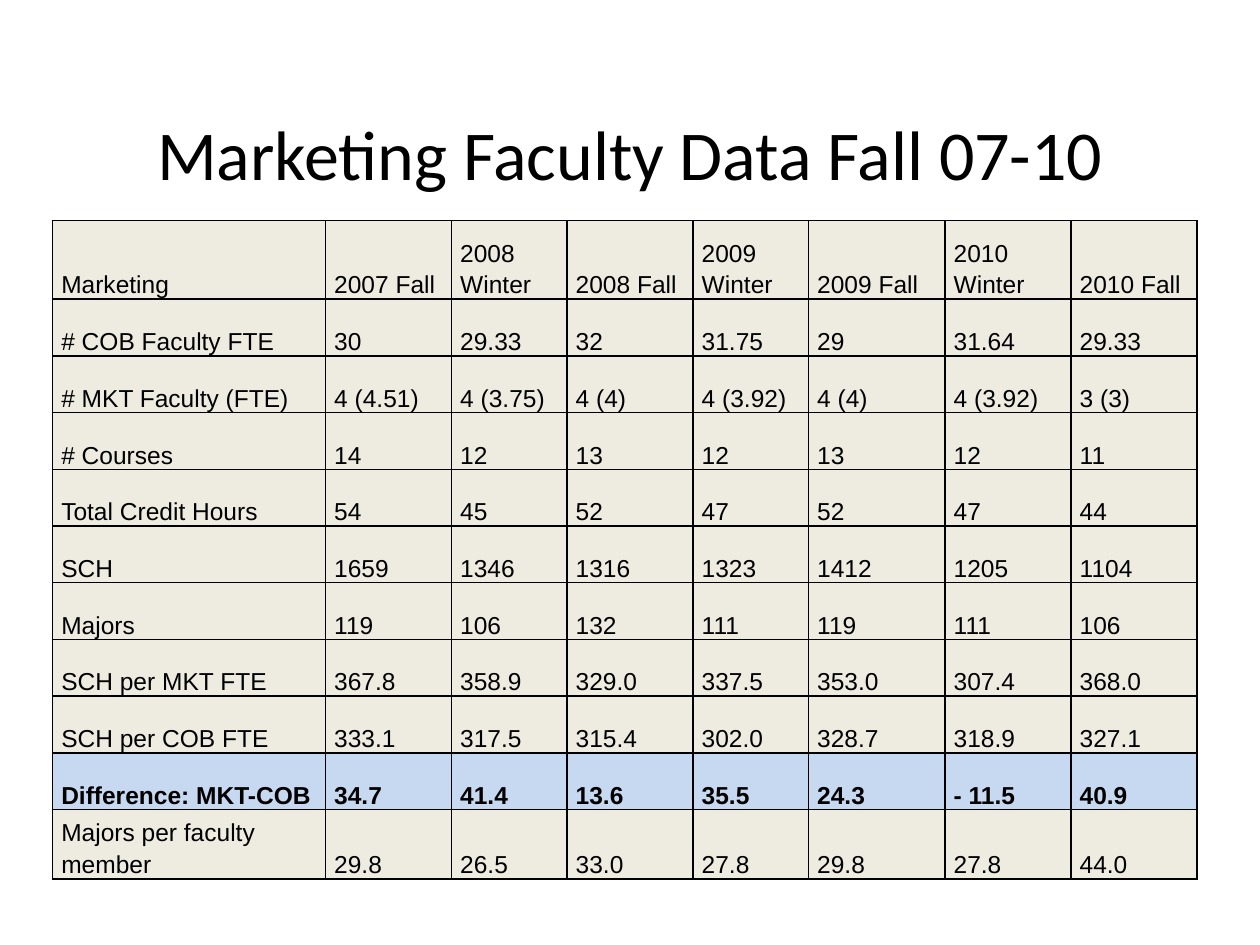
from dataclasses import dataclass

from lxml.etree import SubElement
from pptx import Presentation
from pptx.dml.color import RGBColor
from pptx.enum.text import MSO_ANCHOR as Anchor, PP_ALIGN as Align
from pptx.oxml.ns import qn
from pptx.util import Inches, Length, Pt

COLUMNS = (26, 12, 11, 12, 11, 13, 12, 12)
INK, SAND, SKY = "000000", "EEECE1", "C6D9F1"
BODY_FONT = {"name": "Arial", "size": Pt(14), "bold": False}
TITLE_FONT = {"name": "Calibri", "size": Pt(40)}
CELL_FORMAT = {
    "vertical_anchor": Anchor.BOTTOM,
    "margin_left": Inches(0.07),
    "margin_right": Inches(0.07),
    "margin_top": 0,
    "margin_bottom": 0,
}


@dataclass
class Row:
    """One table row, with its height in grid units."""

    label: str
    values: tuple[str, ...]
    height: float = 5.4
    fill: str = SAND
    bold: bool = False


ROWS = (
    Row("Marketing", ("2007 Fall", "2008 Winter", "2008 Fall", "2009 Winter",
                      "2009 Fall", "2010 Winter", "2010 Fall"), height=7.5),
    Row("# COB Faculty FTE", ("30", "29.33", "32", "31.75", "29", "31.64", "29.33")),
    Row("# MKT Faculty (FTE)", ("4 (4.51)", "4 (3.75)", "4 (4)", "4 (3.92)",
                                "4 (4)", "4 (3.92)", "3 (3)")),
    Row("# Courses", ("14", "12", "13", "12", "13", "12", "11")),
    Row("Total Credit Hours", ("54", "45", "52", "47", "52", "47", "44")),
    Row("SCH", ("1659", "1346", "1316", "1323", "1412", "1205", "1104")),
    Row("Majors", ("119", "106", "132", "111", "119", "111", "106")),
    Row("SCH per MKT FTE", ("367.8", "358.9", "329.0", "337.5", "353.0", "307.4", "368.0")),
    Row("SCH per COB FTE", ("333.1", "317.5", "315.4", "302.0", "328.7", "318.9", "327.1")),
    Row("Difference: MKT-COB", ("34.7", "41.4", "13.6", "35.5", "24.3", "- 11.5", "40.9"),
        fill=SKY, bold=True),
    Row("Majors per faculty member", ("29.8", "26.5", "33.0", "27.8", "29.8", "27.8", "44.0"),
        height=6.6),
)


def grid(units: float) -> Length:
    """Convert grid units, twelve to the inch, to a length."""
    return Inches(units / 12)


def color(value: str) -> RGBColor:
    """Turn a hex string into a colour."""
    return RGBColor.from_string(value)


def apply(target, values: dict) -> None:
    """Set each named attribute on the target."""
    for name, value in values.items():
        setattr(target, name, value)


def write(p, text: str, font: dict) -> None:
    """Add one formatted run to a paragraph."""
    r = p.add_run()
    r.text = text
    apply(r.font, font)
    r.font.color.rgb = color(INK)


def add_borders(cell) -> None:
    """Draw a one-point line on all four sides of a cell."""
    props = cell._tc.get_or_add_tcPr()
    for side in ("a:lnL", "a:lnR", "a:lnT", "a:lnB"):
        line = SubElement(props, qn(side), w=str(Pt(1)))
        SubElement(SubElement(line, qn("a:solidFill")), qn("a:srgbClr"), val=INK)


def add_title(s, text: str) -> None:
    """Add the centred slide title."""
    tf = s.shapes.add_textbox(*map(grid, (6, 7, 108, 15))).text_frame
    apply(tf, {"word_wrap": True, "vertical_anchor": Anchor.MIDDLE})
    p = tf.paragraphs[0]
    p.alignment = Align.CENTER
    write(p, text, TITLE_FONT)


def fill_cell(cell, text: str, row: Row) -> None:
    """Format a cell and write its text."""
    add_borders(cell)
    apply(cell, CELL_FORMAT)
    cell.fill.solid()
    cell.fill.fore_color.rgb = color(row.fill)
    p = cell.text_frame.paragraphs[0]
    p.line_spacing = 1.15
    write(p, text, BODY_FONT | {"bold": row.bold})


def add_faculty_table(s) -> None:
    """Add the table of faculty data by term."""
    box = (5, 21, sum(COLUMNS), sum(row.height for row in ROWS))
    table = s.shapes.add_table(len(ROWS), len(COLUMNS), *map(grid, box)).table
    apply(table, {"first_row": False, "horz_banding": False})
    for column, width in zip(table.columns, COLUMNS):
        column.width = grid(width)
    for table_row, row in zip(table.rows, ROWS):
        table_row.height = grid(row.height)
        for cell, text in zip(table_row.cells, (row.label, *row.values)):
            fill_cell(cell, text, row)


def main() -> None:
    """Build and save the slide."""
    prs = Presentation()
    apply(prs, {"slide_width": Inches(10), "slide_height": Inches(7.5)})
    s = prs.slides.add_slide(prs.slide_layouts[6])
    add_title(s, "Marketing Faculty Data Fall 07-10")
    add_faculty_table(s)
    prs.save("out.pptx")


if __name__ == "__main__":
    main()
